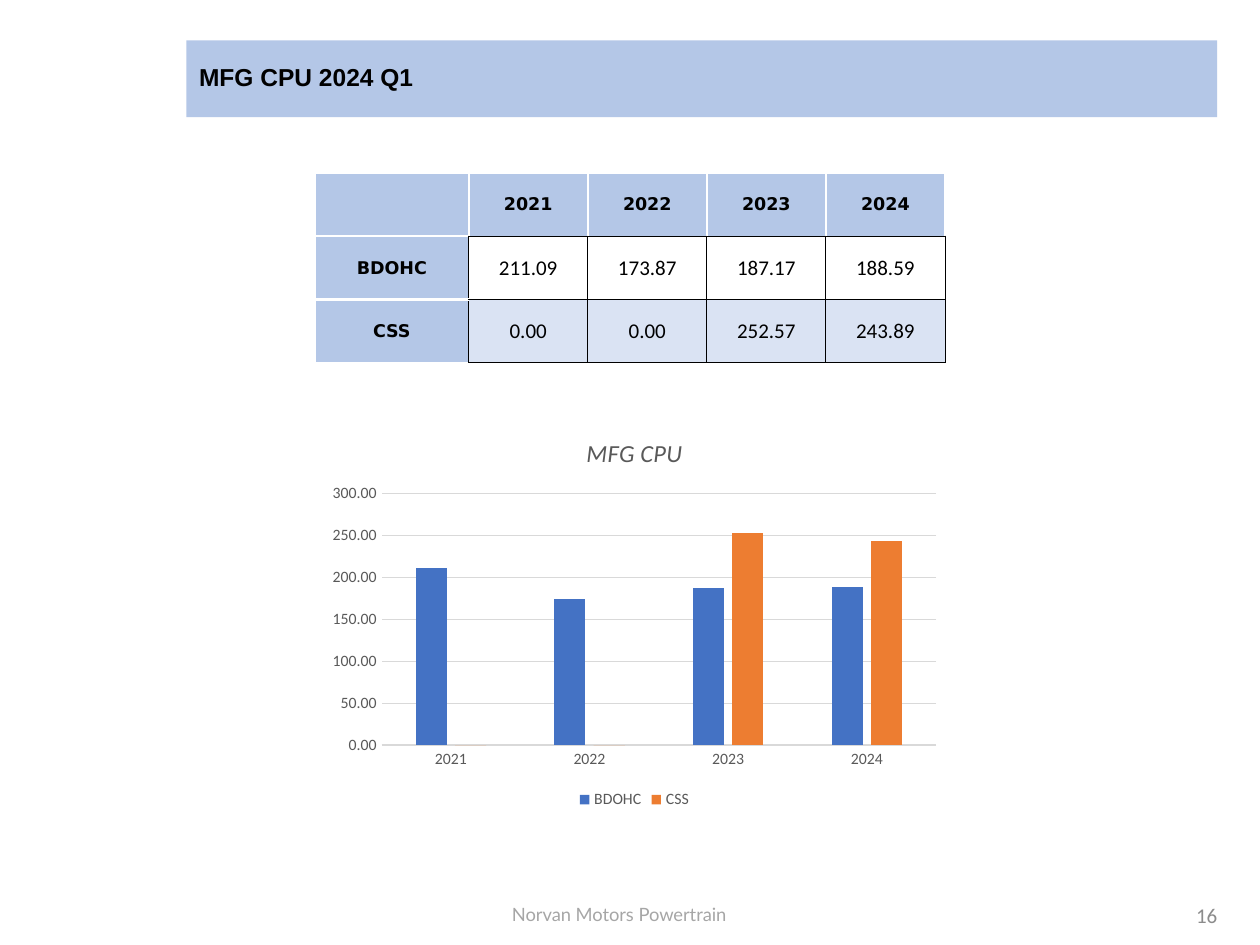
from dataclasses import dataclass

from lxml import etree
from pptx import Presentation
from pptx import util as u
from pptx.chart.data import CategoryChartData
from pptx.dml.color import RGBColor
from pptx.enum import chart as ch
from pptx.enum import text
from pptx.oxml.ns import qn


@dataclass(frozen=True)
class Theme:
    band: str = "B4C7E7"
    stripe: str = "DAE3F3"
    white: str = "FFFFFF"
    ink: str = "000000"
    label: str = "595959"
    grid: str = "D9D9D9"
    footer: str = "A6A6A6"
    number: str = "8C8C8C"
    title_size: float = 14
    value_size: float = 12
    footer_size: float = 10.5
    head_size: float = 10
    chart_size: float = 9
    body_font: str = "Calibri"
    head_font: str = "DejaVu Sans"
    title_font: str = "Arial"
    footer_font: str = "Lato"


@dataclass(frozen=True)
class Engine:
    name: str
    costs: tuple[float, ...]
    fill: str
    color: str


@dataclass(frozen=True)
class Note:
    words: str
    box: tuple[float, float, float, float]
    align: text.PP_ALIGN
    anchor: text.MSO_ANCHOR
    font: str
    size: float
    color: str


T = Theme()
YEARS = ("2021", "2022", "2023", "2024")
ENGINES = (
    Engine("BDOHC", (211.09, 173.87, 187.17, 188.59), T.white, "4472C4"),
    Engine("CSS", (0, 0, 252.57, 243.89), T.stripe, "ED7D31"),
)
NOTES = (
    Note("Norvan Motors Powertrain", (3.79, 7.12, 2.25, 0.28), text.PP_ALIGN.CENTER,
         text.MSO_ANCHOR.TOP, T.footer_font, T.footer_size, T.footer),
    Note("16", (7.51, 7.06, 2.25, 0.4), text.PP_ALIGN.RIGHT,
         text.MSO_ANCHOR.MIDDLE, T.body_font, T.value_size, T.number),
)


def set_font(font, name: str, size: float, color: str, bold=False, italic=False) -> None:
    font.name, font.size = name, u.Pt(size)
    font.bold, font.italic = bold, italic
    font.color.rgb = RGBColor.from_string(color)


def set_fill(fill, color: str) -> None:
    fill.solid()
    fill.fore_color.rgb = RGBColor.from_string(color)


def add_title(s, words: str) -> None:
    sp = s.shapes.title
    sp.left, sp.top, sp.width, sp.height = map(u.Inches, (1.48, 0.32, 8.18, 0.61))
    set_fill(sp.fill, T.band)
    tf = sp.text_frame
    tf.text = words
    tf.auto_size = text.MSO_AUTO_SIZE.NONE
    tf.vertical_anchor = text.MSO_ANCHOR.MIDDLE
    p = tf.paragraphs[0]
    p.alignment = text.PP_ALIGN.LEFT
    p.line_spacing = 0.9
    set_font(p.font, T.title_font, T.title_size, T.ink, bold=True)


def add_note(s, note: Note) -> None:
    tf = s.shapes.add_textbox(*map(u.Inches, note.box)).text_frame
    tf.word_wrap = True
    tf.vertical_anchor = note.anchor
    p = tf.paragraphs[0]
    p.text = note.words
    p.alignment = note.align
    set_font(p.font, note.font, note.size, note.color)


def set_borders(cell, black_sides: str) -> None:
    tc_pr = cell._tc.get_or_add_tcPr()
    for i, side in enumerate("LRTB"):
        color, width = (T.ink, 0.5) if side in black_sides else (T.white, 1.5)
        ln = etree.Element(qn(f"a:ln{side}"), w=str(u.Pt(width)))
        fill = etree.SubElement(ln, qn("a:solidFill"))
        etree.SubElement(fill, qn("a:srgbClr"), val=color)
        tc_pr.insert(i, ln)


def format_cell(cell, words: str, fill: str, black_sides: str, head: bool) -> None:
    cell.margin_left = cell.margin_right = cell.margin_top = u.Inches(0.01)
    cell.margin_bottom = 0
    cell.vertical_anchor = text.MSO_ANCHOR.MIDDLE
    set_fill(cell.fill, fill)
    set_borders(cell, black_sides)
    p = cell.text_frame.paragraphs[0]
    p.alignment = text.PP_ALIGN.CENTER
    if words:
        p.text = words
    if head:
        set_font(p.font, T.head_font, T.head_size, T.ink, bold=True)
    else:
        set_font(p.font, T.body_font, T.value_size, T.ink)


def add_cost_table(s) -> None:
    left, top, width, height = map(u.Inches, (2.5, 1.37, 5.0, 1.51))
    table = s.shapes.add_table(len(ENGINES) + 1, len(YEARS) + 1, left, top, width, height).table
    table.first_row = table.horz_banding = False
    name_width = u.Inches(1.22)
    for i, col in enumerate(table.columns):
        col.width = (width - name_width) // len(YEARS) if i else name_width
    format_cell(table.cell(0, 0), "", T.band, "", True)
    for c, year in enumerate(YEARS, 1):
        format_cell(table.cell(0, c), year, T.band, "B", True)
    for r, engine in enumerate(ENGINES, 1):
        format_cell(table.cell(r, 0), engine.name, T.band, "R", True)
        for c, cost in enumerate(engine.costs, 1):
            format_cell(table.cell(r, c), f"{cost:.2f}", engine.fill, "LRTB", False)


def format_axis(axis) -> None:
    axis.major_tick_mark = axis.minor_tick_mark = ch.XL_TICK_MARK.NONE
    set_font(axis.tick_labels.font, T.body_font, T.chart_size, T.label)


def set_line(line) -> None:
    line.color.rgb = RGBColor.from_string(T.grid)
    line.width = u.Pt(0.75)


def add_cost_chart(s) -> None:
    data = CategoryChartData(number_format="#,##0.00")
    data.categories = YEARS
    for engine in ENGINES:
        data.add_series(engine.name, [round(cost) for cost in engine.costs])
    box = map(u.Inches, (2.54, 3.31, 4.99, 3.15))
    chart = s.shapes.add_chart(ch.XL_CHART_TYPE.COLUMN_CLUSTERED, *box, data).chart
    set_font(chart.font, T.body_font, T.head_size, T.ink)

    p = chart.chart_title.text_frame.paragraphs[0]
    p.text = "MFG CPU"
    set_font(p.font, T.body_font, T.title_size, T.label, italic=True)
    chart.chart_title.include_in_layout = False

    chart.has_legend = True
    chart.legend.position = ch.XL_LEGEND_POSITION.BOTTOM
    chart.legend.include_in_layout = False
    set_font(chart.legend.font, T.body_font, T.chart_size, T.label)

    plot = chart.plots[0]
    plot.gap_width, plot.overlap, plot.vary_by_categories = 219, -27, False
    for series, engine in zip(plot.series, ENGINES):
        set_fill(series.format.fill, engine.color)

    format_axis(chart.category_axis)
    set_line(chart.category_axis.format.line)
    axis = chart.value_axis
    format_axis(axis)
    axis.minimum_scale, axis.maximum_scale, axis.major_unit = 0, 300, 50
    axis.tick_labels.number_format = "#,##0.00"
    axis.tick_labels.number_format_is_linked = False
    axis.format.line.fill.background()
    set_line(axis.major_gridlines.format.line)


def main() -> None:
    prs = Presentation()
    prs.slide_width, prs.slide_height = u.Inches(10), u.Inches(7.5)
    s = prs.slides.add_slide(prs.slide_layouts[5])
    add_title(s, "MFG CPU 2024 Q1")
    for note in NOTES:
        add_note(s, note)
    add_cost_table(s)
    add_cost_chart(s)
    prs.save("out.pptx")


if __name__ == "__main__":
    main()
